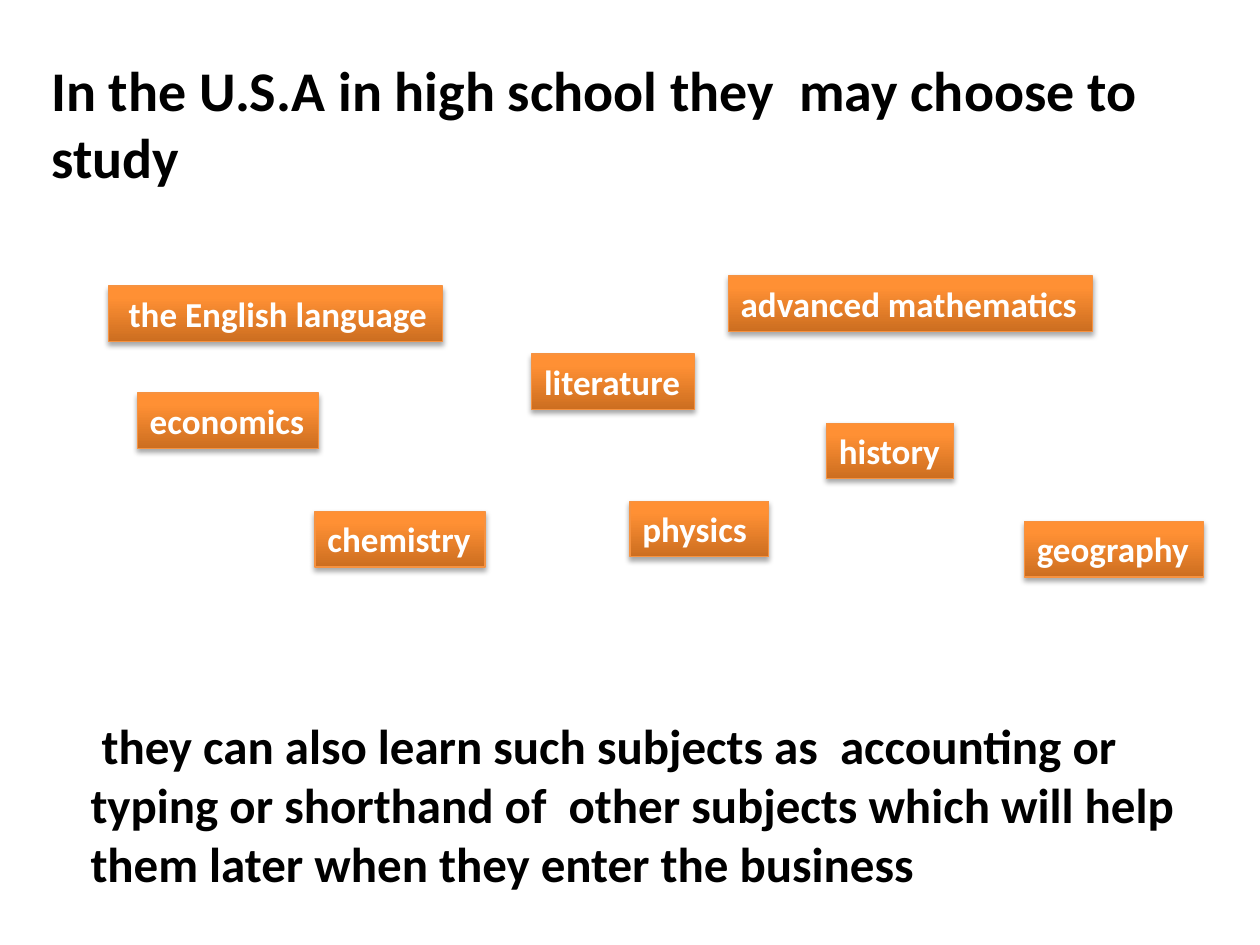
from dataclasses import dataclass

from lxml.etree import SubElement
from pptx import Presentation
from pptx.dml.color import RGBColor
from pptx.enum.shapes import MSO_SHAPE
from pptx.enum.text import MSO_ANCHOR, MSO_AUTO_SIZE, PP_ALIGN
from pptx.oxml import parse_xml
from pptx.oxml.ns import nsdecls, qn
from pptx.shapes.autoshape import Shape
from pptx.slide import Slide
from pptx.util import Inches, Pt


@dataclass(frozen=True)
class Theme:
    font: str = "Calibri"
    ink: str = "000000"
    label_ink: str = "FFFFFF"
    label_edge: str = "F69240"
    label_gradient: tuple = ((0, "CC6E20"), (80, "FF9034"), (100, "FF9136"))
    shadow: str = "000000"
    heading_size: int = 32
    closing_size: int = 28
    label_size: int = 20


@dataclass(frozen=True)
class Subject:
    name: str
    left: float
    top: float
    width: float


THEME = Theme()
LABEL_HEIGHT = 0.44
HEADING = "In the U.S.A in high school they  may choose to study"
CLOSING = (
    " they can also learn such subjects as  accounting or typing or shorthand of"
    "  other subjects which will help them later when they enter the business"
)
SUBJECTS = (
    Subject(" the English language", 0.86, 2.27, 2.65),
    Subject("literature", 4.22, 2.81, 1.29),
    Subject("history", 6.56, 3.36, 1.01),
    Subject("geography", 8.13, 4.14, 1.42),
    Subject("economics", 1.09, 3.12, 1.44),
    Subject("advanced mathematics", 5.78, 2.19, 2.89),
    Subject("physics ", 5, 3.98, 1.1),
    Subject("chemistry", 2.5, 4.06, 1.35),
)


def write_text(shape: Shape, text: str, *, size: int, color: str, wrap: bool = True) -> None:
    frame = shape.text_frame
    frame.word_wrap = wrap
    frame.auto_size = MSO_AUTO_SIZE.SHAPE_TO_FIT_TEXT
    frame.vertical_anchor = MSO_ANCHOR.TOP
    paragraph = frame.paragraphs[0]
    paragraph.alignment = PP_ALIGN.LEFT
    run = paragraph.add_run()
    run.text = text
    run.font.name = THEME.font
    run.font.size = Pt(size)
    run.font.bold = True
    run.font.color.rgb = RGBColor.from_string(color)


def style_label(label: Shape) -> None:
    """Give a label its edge, three-stop gradient and soft drop shadow."""
    label.line.color.rgb = RGBColor.from_string(THEME.label_edge)
    label.line.width = Pt(0.75)
    label.shadow.inherit = False

    properties = label.element.spPr
    stops = "".join(
        f'<a:gs pos="{percent * 1000}"><a:srgbClr val="{color}"/></a:gs>'
        for percent, color in THEME.label_gradient
    )
    gradient = parse_xml(
        f'<a:gradFill {nsdecls("a")} rotWithShape="1"><a:gsLst>{stops}</a:gsLst>'
        '<a:lin ang="16200000" scaled="0"/></a:gradFill>'
    )
    properties.find(qn("a:ln")).addprevious(gradient)

    shadow = SubElement(
        properties.find(qn("a:effectLst")), qn("a:outerShdw"),
        blurRad=str(Pt(3.1)), dist=str(Pt(1.8)), dir="5400000", rotWithShape="0",
    )
    shadow_color = SubElement(shadow, qn("a:srgbClr"), val=THEME.shadow)
    SubElement(shadow_color, qn("a:alpha"), val="35000")


def add_subject(slide: Slide, subject: Subject) -> None:
    label = slide.shapes.add_shape(
        MSO_SHAPE.RECTANGLE, Inches(subject.left), Inches(subject.top),
        Inches(subject.width), Inches(LABEL_HEIGHT),
    )
    style_label(label)
    write_text(label, subject.name, size=THEME.label_size, color=THEME.label_ink, wrap=False)


def main() -> None:
    deck = Presentation()
    deck.slide_width, deck.slide_height = Inches(10), Inches(7.5)
    slide = deck.slides.add_slide(deck.slide_layouts[6])

    heading = slide.shapes.add_textbox(Inches(0.31), Inches(0.39), Inches(9.3), Inches(1.18))
    write_text(heading, HEADING, size=THEME.heading_size, color=THEME.ink)
    for subject in SUBJECTS:
        add_subject(slide, subject)
    closing = slide.shapes.add_textbox(Inches(0.62), Inches(5.63), Inches(8.91), Inches(1.51))
    write_text(closing, CLOSING, size=THEME.closing_size, color=THEME.ink)

    deck.save("out.pptx")


if __name__ == "__main__":
    main()
